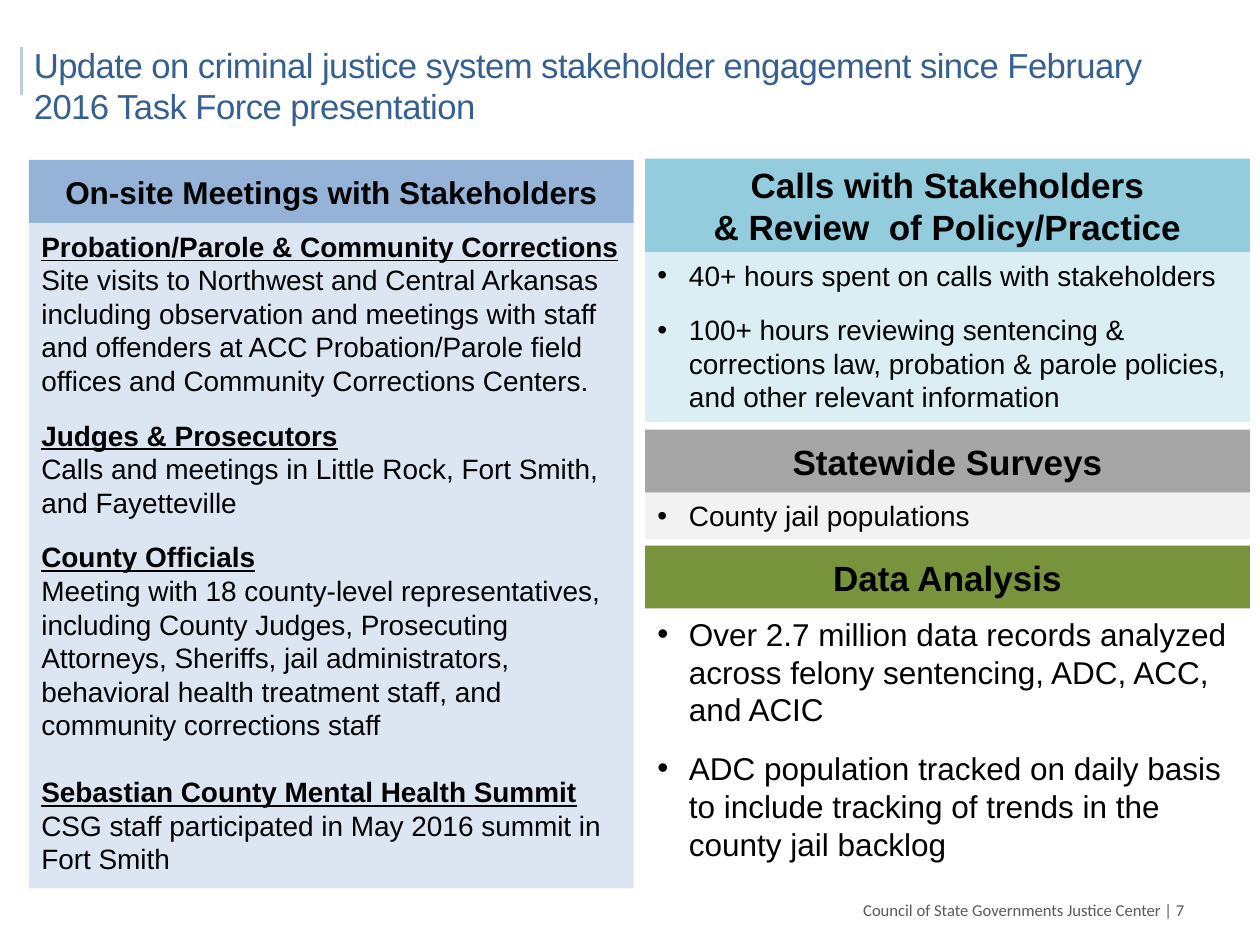
import pptx
import pptx.util
import pptx.dml.color
import pptx.enum.shapes
import pptx.enum.text
import pptx.oxml.ns
from dataclasses import dataclass
from lxml import etree

ALIGN = pptx.enum.text.PP_ALIGN
ANCHOR = pptx.enum.text.MSO_ANCHOR
RECT = pptx.enum.shapes.MSO_SHAPE.RECTANGLE
qn = pptx.oxml.ns.qn

deck = pptx.Presentation()
deck.slide_width = pptx.util.Inches(10)
deck.slide_height = pptx.util.Inches(7.5)
slide = deck.slides.add_slide(deck.slide_layouts[6])

# Grid of 100 columns by 75 rows
CELL = deck.slide_width / 100
LEFT, RIGHT, WIDE = 2.3, 51.2, 48


@dataclass
class Para:
    text: str
    size: float = 16
    bold: bool = False
    line: bool = False
    before: float = 0
    bullet: bool = False
    align: ALIGN = ALIGN.LEFT
    color: str = "000000"
    font: str = "Arial"
    track: float = 0


@dataclass
class Card:
    col: float
    row: float
    head: list[str]
    size: float
    high: float
    shade: str
    body: list[Para]
    deep: float
    tint: str | None


def cell(count: float) -> int:
    return round(count * CELL)


def tone(code: str) -> pptx.dml.color.RGBColor:
    return pptx.dml.color.RGBColor.from_string(code)


def write(shape, paras: list[Para], anchor: ANCHOR) -> None:
    frame = shape.text_frame
    frame.word_wrap = True
    frame.vertical_anchor = anchor
    for spot, item in enumerate(paras):
        para = frame.add_paragraph() if spot else frame.paragraphs[0]
        para.alignment = item.align
        para.space_before = pptx.util.Pt(item.before)
        if item.bullet:
            props = para._p.get_or_add_pPr()
            props.set("marL", str(cell(2.5)))
            props.set("indent", str(-cell(2.5)))
            etree.SubElement(props, qn("a:buFont")).set("typeface", "Arial")
            etree.SubElement(props, qn("a:buChar")).set("char", "•")
        run = para.add_run()
        run.text = item.text
        font = run.font
        font.name = item.font
        font.size = pptx.util.Pt(item.size)
        font.bold = item.bold
        font.underline = item.line
        font.color.rgb = tone(item.color)
        if item.track:
            run._r.get_or_add_rPr().set("spc", str(round(item.track * 100)))


def block(col: float, row: float, wide: float, high: float, paras: list[Para],
          fill: str | None = None, anchor: ANCHOR = ANCHOR.TOP) -> None:
    place = cell(col), cell(row), cell(wide), cell(high)
    if fill:
        shape = slide.shapes.add_shape(RECT, *place)
        shape.shadow.inherit = False
        shape.fill.solid()
        shape.fill.fore_color.rgb = tone(fill)
        shape.line.fill.background()
    else:
        shape = slide.shapes.add_textbox(*place)
    write(shape, paras, anchor)


def draw(card: Card) -> None:
    head = [Para(text, card.size, bold=True, align=ALIGN.CENTER)
            for text in card.head]
    block(card.col, card.row, WIDE, card.high, head, card.shade, ANCHOR.MIDDLE)
    block(card.col, card.row + card.high, WIDE, card.deep, card.body, card.tint)


def topic(name: str, text: str, before: float = 12) -> list[Para]:
    return [Para(name, bold=True, line=True, before=before), Para(text)]


def points(size: float, *texts: str) -> list[Para]:
    return [Para(text, size, before=12, bullet=True) for text in texts]


# Title with its side rule
rule = slide.shapes.add_connector(
    pptx.enum.shapes.MSO_CONNECTOR.STRAIGHT,
    cell(1.7), cell(3.7), cell(1.7), cell(7.5))
rule.line.color.rgb = tone("B9CDE5")
rule.line.width = pptx.util.Pt(2)
etree.SubElement(rule._element.spPr, qn("a:effectLst"))
block(1.7, 3, 93.3, 7.5, [Para(
    "Update on criminal justice system stakeholder engagement since February "
    "2016 Task Force presentation", 19.8, color="376092", track=-0.3)],
    anchor=ANCHOR.MIDDLE)

# Cards: a heading bar over a body
meetings = [
    *topic("Probation/Parole & Community Corrections",
           "Site visits to Northwest and Central Arkansas including observation "
           "and meetings with staff and offenders at ACC Probation/Parole field "
           "offices and Community Corrections Centers.", 0),
    *topic("Judges & Prosecutors",
           "Calls and meetings in Little Rock, Fort Smith, and Fayetteville"),
    *topic("County Officials",
           "Meeting with 18 county-level representatives, including County "
           "Judges, Prosecuting Attorneys, Sheriffs, jail administrators, "
           "behavioral health treatment staff, and community corrections staff"),
    *topic("Sebastian County Mental Health Summit",
           "CSG staff participated in May 2016 summit in Fort Smith", 19),
]
calls = points(
    16, "40+ hours spent on calls with stakeholders",
    "100+ hours reviewing sentencing & corrections law, probation & parole "
    "policies, and other relevant information")
data = points(
    18, "Over 2.7 million data records analyzed across felony sentencing, ADC, "
    "ACC, and ACIC",
    "ADC population tracked on daily basis to include tracking of trends in "
    "the county jail backlog")

for card in (
    Card(LEFT, 12.7, ["On-site Meetings with Stakeholders"], 18, 5, "95B3D7",
         meetings, 52.8, "DCE6F2"),
    Card(RIGHT, 12.6, ["Calls with Stakeholders", "& Review  of Policy/Practice"],
         20, 7.4, "93CDDD", calls, 13.5, "DBEEF4"),
    Card(RIGHT, 34.1, ["Statewide Surveys"], 20, 5, "A6A6A6",
         points(16, "County jail populations"), 3.7, "F2F2F2"),
    Card(RIGHT, 43.3, ["Data Analysis"], 20, 5, "77933C", data, 20.9, None),
):
    draw(card)

# Footer
block(62.6, 69.5, 32.4, 4, [Para(
    "Council of State Governments Justice Center | 7", 9.5, align=ALIGN.RIGHT,
    color="595959", font="Calibri")], anchor=ANCHOR.BOTTOM)

deck.save("out.pptx")
